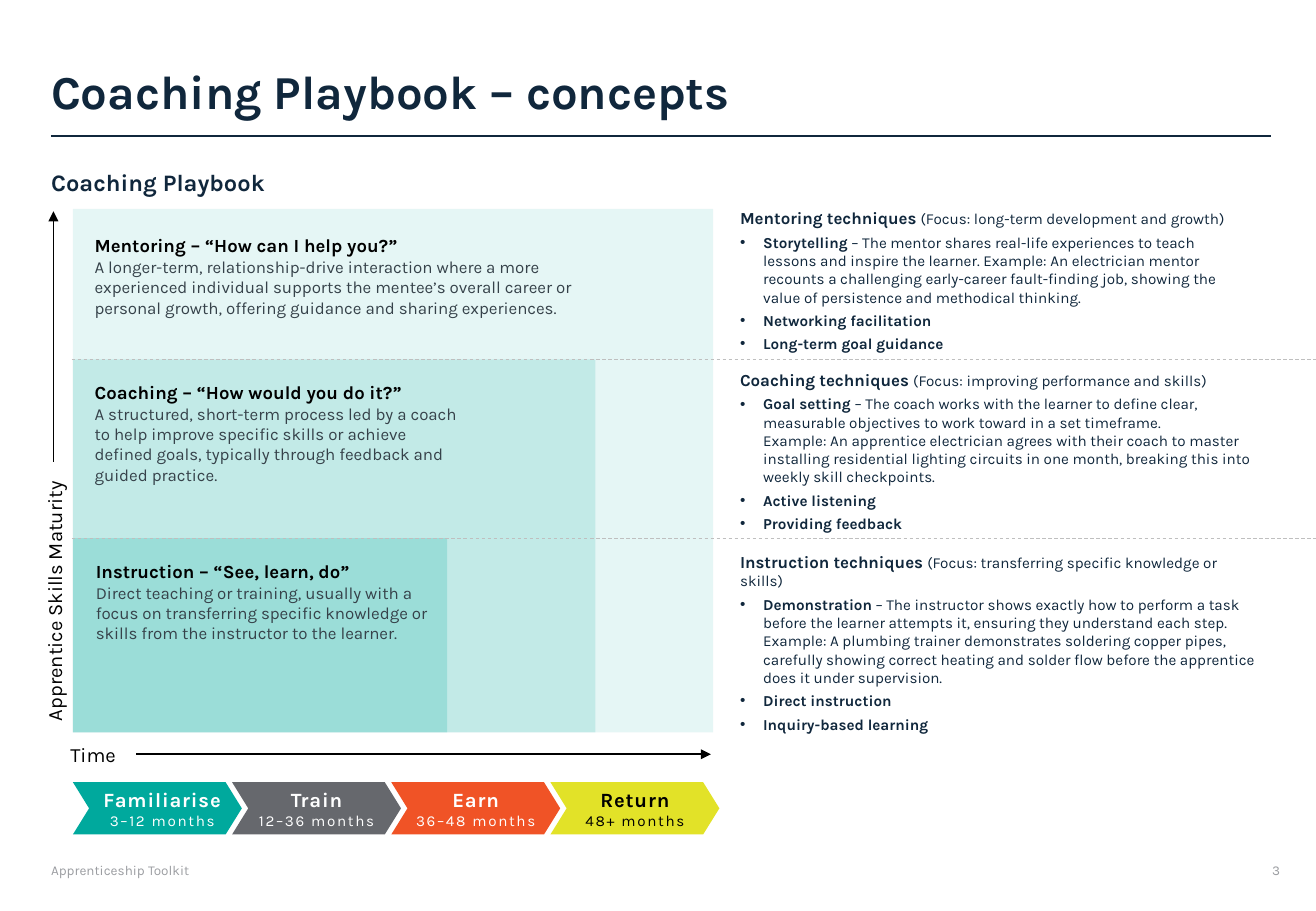
from copy import deepcopy

from lxml.etree import SubElement
from pptx import Presentation
from pptx.dml.color import RGBColor
from pptx.enum.dml import MSO_LINE
from pptx.enum.shapes import MSO_CONNECTOR, MSO_SHAPE
from pptx.enum.text import MSO_ANCHOR as Anchor, MSO_AUTO_SIZE, PP_ALIGN as Align
from pptx.oxml.ns import qn
from pptx.util import Inches, Pt

NAVY = RGBColor(0x10, 0x27, 0x3C)
TEAL = RGBColor(0x00, 0xA9, 0x9D)
SLATE = RGBColor(0x66, 0x68, 0x6D)
ORANGE = RGBColor(0xF0, 0x53, 0x26)
LIME = RGBColor(0xE2, 0xE2, 0x28)
BODY_GREY = RGBColor(0x36, 0x42, 0x4A)
FOOTER_GREY = RGBColor(0x9B, 0x9D, 0xA1)
RULE_GREY = RGBColor(0xBF, 0xBF, 0xBF)
BLACK = RGBColor(0, 0, 0)
WHITE = RGBColor(0xFF, 0xFF, 0xFF)

presentation = Presentation()
presentation.slide_width, presentation.slide_height = Inches(10.83), Inches(7.5)
slide = presentation.slides.add_slide(presentation.slide_layouts[4])
shapes = slide.shapes
title, subtitle, *technique_lists = slide.placeholders


def place_text(shape, box, insets, paragraphs, align=Align.LEFT, anchor=Anchor.TOP):
    """Fill a shape with paragraphs, each a list of (text, size, bold, colour) runs."""
    shape.left, shape.top, shape.width, shape.height = map(Inches, box)
    frame = shape.text_frame
    frame.word_wrap, frame.auto_size = True, MSO_AUTO_SIZE.NONE
    frame.vertical_anchor = anchor
    (frame.margin_left, frame.margin_top,
     frame.margin_right, frame.margin_bottom) = map(Inches, insets)
    for index, runs in enumerate(paragraphs):
        paragraph = frame.add_paragraph() if index else frame.paragraphs[0]
        paragraph.alignment = align
        paragraph.space_before, paragraph.line_spacing = Pt(0), 1.0
        for text, size, bold, color in runs:
            for number, line in enumerate(text.split("\n")):
                if number:
                    paragraph.add_line_break()
                    paragraph._p[-1].append(deepcopy(run._r.rPr))
                run = paragraph.add_run()
                run.text = line
                run.font.name, run.font.size, run.font.bold = "Karla", Pt(size), bold
                run.font.color.rgb = color
    return frame.paragraphs


def add_line(start, end, color, width, arrow=False, dashed=False):
    line = shapes.add_connector(MSO_CONNECTOR.STRAIGHT, *map(Inches, start + end))
    line.line.color.rgb, line.line.width = color, Pt(width)
    if dashed:
        line.line.dash_style = MSO_LINE.DASH
    if arrow:
        SubElement(line.line._get_or_add_ln(), qn("a:tailEnd"), type="triangle")
    SubElement(line._element.spPr, qn("a:effectLst"))


NO_INSETS = (0, 0, 0, 0)
LABEL_INSETS = (0, 0.05, 0.1, 0.05)
TEXT_INSETS = (0.1, 0.05, 0.1, 0.05)

# Headings and footer
place_text(title, (0.42, 0.51, 6.57, 0.47), NO_INSETS,
           [[("Coaching Playbook – concepts", 28, True, NAVY)]])
place_text(subtitle, (0.42, 1.38, 6.57, 0.24), NO_INSETS,
           [[("Coaching Playbook", 14, True, NAVY)]])
add_line((0.42, 1.12), (10.46, 1.12), NAVY, 1)
for text, box in (("Apprenticeship Toolkit", (0.42, 7.1, 2.19, 0.18)),
                  ("3", (10.47, 7.1, 0.36, 0.11))):
    place_text(shapes.add_textbox(0, 0, 0, 0), box, NO_INSETS,
               [[(text, 8, False, FOOTER_GREY)]])

# Nested stages sharing the lower left corner: top, width, opacity %, text box, heading, text
STAGE_LEFT, STAGE_BOTTOM = 0.6, 6.03
stages = [
    (1.72, 5.27, 10, (0.68, 1.88, 4.4, 0.79), "Mentoring – “How can I help you?”",
     "A longer-term, relationship-drive interaction where a more experienced individual "
     "supports the mentee’s overall career or personal growth, offering guidance and "
     "sharing experiences."),
    (2.96, 4.3, 15, (0.68, 3.09, 3.25, 0.96), "Coaching – “How would you do it?”",
     "A structured, short-term process led by a coach to help improve specific skills or "
     "achieve defined goals, typically through feedback and guided practice."),
    (4.43, 3.08, 20, (0.69, 4.56, 2.93, 0.79), "Instruction – “See, learn, do”",
     "Direct teaching or training, usually with a focus on transferring specific knowledge "
     "or skills from the instructor to the learner."),
]
for top, width, opacity, text_box, heading, description in stages:
    panel = shapes.add_shape(MSO_SHAPE.RECTANGLE, Inches(STAGE_LEFT), Inches(top),
                             Inches(width), Inches(STAGE_BOTTOM - top))
    panel.shadow.inherit = False
    panel.fill.solid()
    panel.fill.fore_color.rgb = TEAL
    panel.line.fill.background()
    fill_color = panel._element.spPr.find(f".//{qn('a:srgbClr')}")
    SubElement(fill_color, qn("a:alpha"), val=str(opacity * 1000))
for top, width, opacity, text_box, heading, description in stages:
    place_text(shapes.add_textbox(0, 0, 0, 0), text_box, TEXT_INSETS,
               [[(heading, 11, True, BLACK)], [(description, 10, False, BODY_GREY)]])

# Techniques: box, heading, focus, lead point, its detail, further points
techniques = [
    ((5.99, 1.66, 4.34, 1.3), "Mentoring techniques ",
     "(Focus: long-term development and growth)", "Storytelling ",
     "– The mentor shares real-life experiences to teach lessons and inspire the learner. "
     "Example: An electrician mentor recounts a challenging early-career fault-finding job, "
     "showing the value of persistence and methodical thinking.",
     ("Networking facilitation", "Long-term goal guidance")),
    ((5.99, 2.99, 4.47, 1.46), "Coaching techniques ",
     "(Focus: improving performance and skills)", "Goal setting ",
     "– The coach works with the learner to define clear, measurable objectives to work "
     "toward in a set timeframe. \nExample: An apprentice electrician agrees with their coach "
     "to master installing residential lighting circuits in one month, breaking this into "
     "weekly skill checkpoints.",
     ("Active listening", "Providing feedback")),
    ((5.99, 4.49, 4.48, 1.46), "Instruction techniques ",
     "(Focus: transferring specific knowledge or skills)", "Demonstration",
     " – The instructor shows exactly how to perform a task before the learner attempts it, "
     "ensuring they understand each step. Example: A plumbing trainer demonstrates soldering "
     "copper pipes, carefully showing correct heating and solder flow before the apprentice "
     "does it under supervision.",
     ("Direct instruction", "Inquiry-based learning")),
]
for placeholder, (box, heading, focus, lead, detail, points) in zip(technique_lists, techniques):
    paragraphs = place_text(placeholder, box, TEXT_INSETS, [
        [(heading, 10, True, NAVY), (focus, 9, False, NAVY)],
        [(lead, 9, True, NAVY), (detail, 9, False, NAVY)],
        *([(point, 9, True, NAVY)] for point in points)])
    for index, paragraph in enumerate(paragraphs):
        paragraph.space_after = Pt(3)
        properties = paragraph._p.get_or_add_pPr()
        indent = Inches(0.19) if index else 0
        properties.set("marL", str(indent))
        properties.set("indent", str(-indent))
        if index:
            SubElement(properties, qn("a:buFont"), typeface="Arial")
            SubElement(properties, qn("a:buChar"), char="•")
        else:
            SubElement(properties, qn("a:buNone"))

for stage in stages[1:]:
    add_line((0.59, stage[0]), (10.83, stage[0]), RULE_GREY, 0.5, dashed=True)

# Axes
maturity_label = shapes.add_textbox(0, 0, 0, 0)
place_text(maturity_label, (-0.66, 4.75, 2.21, 0.3), LABEL_INSETS,
           [[("Apprentice Skills Maturity", 12, False, BLACK)]], Align.CENTER)
maturity_label.rotation = 270
place_text(shapes.add_textbox(0, 0, 0, 0), (0.58, 6.06, 0.54, 0.3), LABEL_INSETS,
           [[("Time", 12, False, BLACK)]])
add_line((0.44, 3.8), (0.44, 1.74), BLACK, 1, arrow=True)
add_line((1.12, 6.21), (5.85, 6.21), BLACK, 1, arrow=True)

# Timeline chevrons
phases = [
    ("Familiarise", "3–12 months", TEAL, WHITE, (0.08, 0.05, 0, 0.05)),
    ("Train", "12–36 months", SLATE, WHITE, (0.04, 0.05, 0.04, 0.05)),
    ("Earn", "36–48 months", ORANGE, WHITE, (0.04, 0.05, 0.04, 0.05)),
    ("Return", "48+ months", LIME, BLACK, (0.04, 0.05, 0.04, 0.05)),
]
for index, (name, period, color, text_color, insets) in enumerate(phases):
    chevron = shapes.add_shape(MSO_SHAPE.CHEVRON, 0, 0, 0, 0)
    chevron.adjustments[0] = 0.31
    chevron.shadow.inherit = False
    chevron.fill.solid()
    chevron.fill.fore_color.rgb = color
    chevron.line.fill.background()
    paragraphs = place_text(chevron, (STAGE_LEFT + 1.31 * index, 6.44, 1.39, 0.43), insets,
                            [[(name, 12, True, text_color)], [(period, 9, False, text_color)]],
                            Align.CENTER, Anchor.MIDDLE)
    for paragraph, spacing in zip(paragraphs, (50, 100)):
        paragraph.runs[0]._r.rPr.set("spc", str(spacing))

presentation.save("out.pptx")
